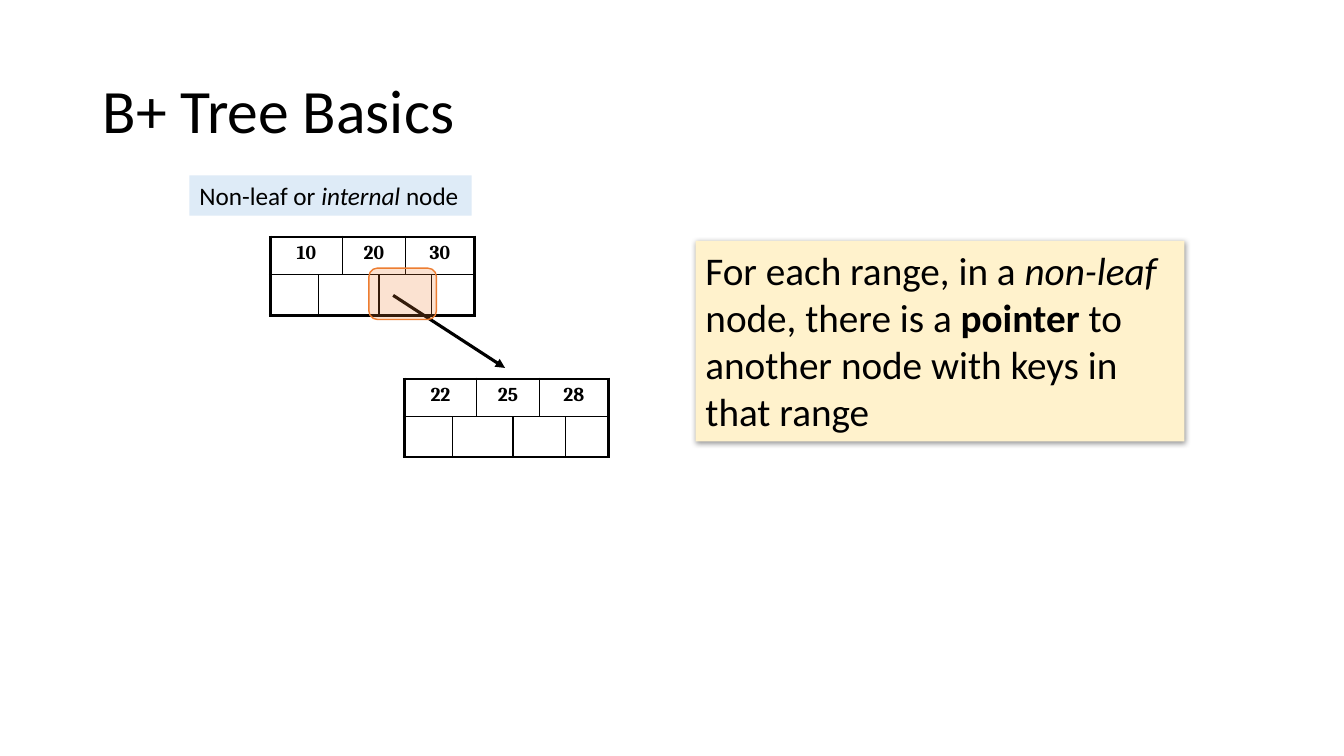
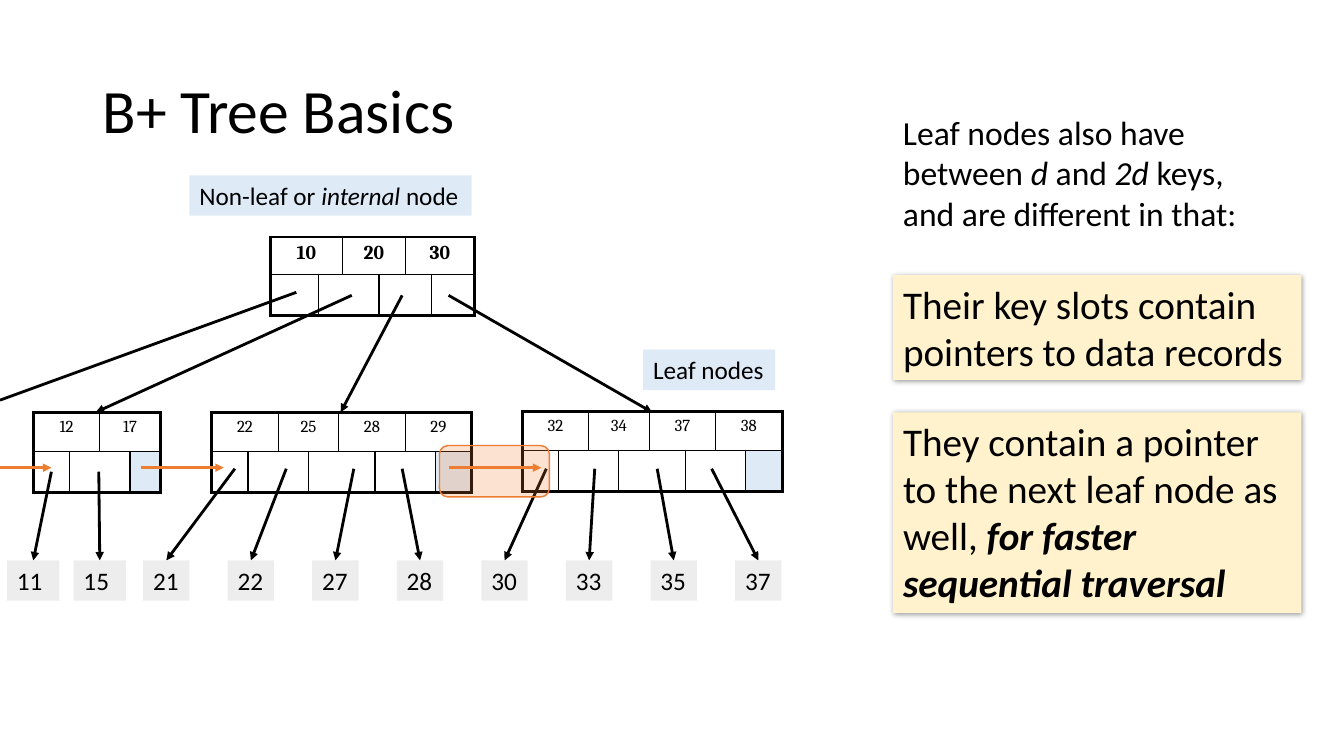
from dataclasses import dataclass

from lxml import etree
from pptx import Presentation
from pptx.dml.color import RGBColor
from pptx.enum.shapes import MSO_CONNECTOR, MSO_SHAPE
from pptx.enum.text import MSO_ANCHOR, MSO_AUTO_SIZE, PP_ALIGN
from pptx.oxml.ns import qn
from pptx.util import Inches, Pt

LINE = MSO_CONNECTOR.STRAIGHT
ROUND = MSO_SHAPE.ROUNDED_RECTANGLE
MIDDLE = MSO_ANCHOR.MIDDLE
FIT, FIXED = MSO_AUTO_SIZE.SHAPE_TO_FIT_TEXT, MSO_AUTO_SIZE.NONE
LEFT, CENTER = PP_ALIGN.LEFT, PP_ALIGN.CENTER

# The grid has ten columns and ten rows to the inch
CELL = Inches(0.1)
WIDE, HIGH = 133.33, 75


@dataclass(frozen=True)
class Theme:
    ink: str = "000000"
    blue: str = "DEEBF7"
    cream: str = "FFF2CC"
    gray: str = "EDEDED"
    orange: str = "ED7D31"
    sans: str = "Calibri"
    serif: str = "Cambria"
    title: int = 44
    note: int = 28
    text: int = 24
    label: int = 18
    key: int = 14
    leaf: int = 12
    thick: float = 2.25
    mid: float = 2
    thin: float = 1


def grid(*spots):
    return [round(spot * CELL) for spot in spots]


def rgb(color):
    return RGBColor.from_string(color)


def node(home, tag, **attrs):
    names = {name: str(value) for name, value in attrs.items()}
    return etree.SubElement(home, qn(tag), names)


class Deck:
    def __init__(self, theme):
        self.theme = theme
        self.file = Presentation()
        self.file.slide_width, self.file.slide_height = grid(WIDE, HIGH)
        self.slide = None

    def page(self, title):
        """Start a slide with the shared title style."""
        self.slide = self.file.slides.add_slide(self.file.slide_layouts[5])
        head = self.slide.shapes.title
        head.left, head.top, head.width, head.height = grid(9.2, 4, 115, 14.5)
        frame = head.text_frame
        frame.auto_size = FIXED
        frame.vertical_anchor = MIDDLE
        para = frame.paragraphs[0]
        para.line_spacing = 0.9
        self.put(para, [(title, "")], self.theme.title)

    def put(self, para, runs, size, face=None, align=LEFT):
        """Add runs; a mark of b or i makes a run bold or italic."""
        para.alignment = align
        for text, mark in runs:
            run = para.add_run()
            run.text = text
            font = run.font
            font.name = face or self.theme.sans
            font.size = Pt(size)
            font.bold = "b" in mark
            font.italic = "i" in mark
            font.color.rgb = rgb(self.theme.ink)

    def box(self, spot, runs, size, fill=None, wrap=True):
        shape = self.slide.shapes.add_textbox(*grid(*spot))
        if fill:
            shape.fill.solid()
            shape.fill.fore_color.rgb = rgb(fill)
        frame = shape.text_frame
        frame.word_wrap = wrap
        frame.auto_size = FIT
        self.put(frame.paragraphs[0], runs, size)
        return shape

    def label(self, spot, runs):
        self.box(spot, runs, self.theme.label, self.theme.blue, wrap=False)

    def note(self, spot, runs):
        """Cream box with a soft shadow."""
        shape = self.box(spot, runs, self.theme.note, self.theme.cream)
        soft = node(node(shape._element.spPr, "a:effectLst"), "a:outerShdw",
                    blurRad=Pt(4), dist=Pt(1), dir=45 * 60000,
                    algn="tl", rotWithShape=0)
        tint = node(soft, "a:srgbClr", val=self.theme.ink)
        node(tint, "a:alpha", val=40000)

    def record(self, left, width, text, tail, wrap=False):
        """Data record with the arrow that leads to it."""
        top = 55.6
        self.arrow(tail, (left + width / 2, top))
        self.box((left, top, width, 4), [(text, "")], self.theme.label,
                 self.theme.gray, wrap)

    def arrow(self, tail, tip, color=None, width=None, head=True):
        line = self.slide.shapes.add_connector(LINE, *grid(*tail, *tip))
        line.line.color.rgb = rgb(color or self.theme.ink)
        line.line.width = Pt(width or self.theme.mid)
        props = line._element.spPr
        if head:
            node(props.find(qn("a:ln")), "a:tailEnd", type="triangle")
        node(props, "a:effectLst")

    def glow(self, *spot):
        """See-through frame around a pointer."""
        shape = self.slide.shapes.add_shape(ROUND, *grid(*spot))
        shape.shadow.inherit = False
        shape.fill.solid()
        shape.fill.fore_color.rgb = rgb(self.theme.orange)
        tint = shape._element.spPr.find(qn("a:solidFill"))[0]
        node(tint, "a:alpha", val=22000)
        shape.line.color.rgb = rgb(self.theme.orange)
        shape.line.width = Pt(self.theme.thin)

    def edge(self, cell, sides):
        """Draw the four borders of a cell, before its fill."""
        props = cell._tc.get_or_add_tcPr()
        for side, width in zip("LRTB", sides):
            line = node(props, f"a:ln{side}", w=Pt(width))
            node(node(line, "a:solidFill"), "a:srgbClr", val=self.theme.ink)

    def tree(self, left, top, keys, cols, high, size, mark="", last=None):
        """Tree node: keys on top, pointer slots set off by half a key."""
        count = len(cols)
        frame = self.slide.shapes.add_table(
            2, count, *grid(left, top, sum(cols), 2 * high))
        table = frame.table
        table.first_row = table.horz_banding = False
        for col, width in zip(table.columns, cols):
            col.width = grid(width)[0]
        for row in table.rows:
            row.height = grid(high)[0]
        pairs = [(at, at + 1) for at in range(0, count, 2)]
        slots = [(0, 0), *[(at, at + 1) for at in range(1, count - 1, 2)],
                 (count - 1, count - 1)]
        thick, thin = self.theme.thick, self.theme.thin
        for row, spans in enumerate((pairs, slots)):
            for first, end in spans:
                sides = (thick if first == 0 else thin,
                         thick if end == count - 1 else thin,
                         thin if row else thick,
                         thick if row else thin)
                for at in range(first, end + 1):
                    cell = table.cell(row, at)
                    self.edge(cell, sides)
                    cell.fill.background()
                if end > first:
                    table.cell(row, first).merge(table.cell(row, end))
        for key, (first, _) in zip(keys, pairs):
            para = table.cell(0, first).text_frame.paragraphs[0]
            self.put(para, [(key, mark)], size, self.theme.serif, CENTER)
        if last:
            cell = table.cell(1, count - 1)
            cell.fill.solid()
            cell.fill.fore_color.rgb = rgb(last)

    def inner(self, left, top, keys):
        self.tree(left, top, keys, (4.8, 2.1, 3.6, 2.6, 2.6, 4.3), 3.75,
                  self.theme.key, "b")

    def leaf(self, left, top, keys):
        cols = (3.6, 3, 3, 3, 3.6, 3, 3, 3.6)
        if len(keys) == 2:
            cols = (3.6, 3, 3, 3)
        self.tree(left, top, keys, cols, 3.93, self.theme.leaf,
                  last=self.theme.blue)

    def root(self):
        """Top node and its label, the same on each slide."""
        self.inner(26.8, 23.5, ("10", "20", "30"))
        self.label((18.8, 17.4, 28, 4),
                   [("Non-leaf or ", ""), ("internal ", "i"), ("node", "")])


def ranges(deck):
    deck.page("B+ Tree Basics")
    deck.root()
    deck.arrow((39, 29.3), (50.1, 36.5), width=deck.theme.thick)
    deck.glow(36.6, 26.6, 6.7, 5.1)
    deck.inner(40.1, 37.6, ("22", "25", "28"))
    deck.note((69, 23.9, 48.5, 19.9), [
        ("For each range, in a ", ""), ("non-leaf ", "i"),
        ("node, there is a ", ""), ("pointer", "b"),
        (" to another node with keys in that range", "")])


def leaves(deck):
    deck.page("B+ Tree Basics")
    deck.root()

    # Leaf nodes
    deck.leaf(3.3, 40.9, ("12", "17"))
    deck.leaf(21, 40.9, ("22", "25", "28", "29"))
    deck.leaf(51.8, 40.8, ("32", "34", "37", "38"))
    deck.label((63.8, 34.7, 13.1, 4), [("Leaf nodes", "")])

    # Pointers from the root; the first runs out at the slide's edge
    deck.arrow((29.4, 29), (0, 39.7), head=False)
    for tail, tip in ((34.9, 9.5), (39.9, 33.8), (44.5, 64.7)):
        deck.arrow((tail, 29.3), (tip, 40.9))

    # Data records
    for left, text, tail in ((0.7, "11", 5.1), (7.3, "15", 9.8)):
        deck.record(left, 5.2, text, (tail, 46.8), wrap=True)
    texts = ("21", "22", "27", "28", "30", "33", "35", "37")
    tails = (23.3, 28.4, 35.1, 39.9, 54.2, 59, 65.2, 70.6)
    for at, (text, tail) in enumerate(zip(texts, tails)):
        deck.record(14.2 + 8.39 * at, 4.6, text, (tail, 46.5))

    # Links between leaves
    deck.glow(43.6, 44.2, 10.9, 5.1)
    for tail, tip in ((0, 5.1), (14, 22.2), (44.5, 53.7)):
        deck.arrow((tail, 46.4), (tip, 46.4), deck.theme.orange)

    # Text at the right
    deck.box((88.6, 10.6, 39, 13.1), [
        ("Leaf nodes also have between ", ""), ("d ", "i"), ("and ", ""),
        ("2d ", "i"), ("keys, and are different in that:", "")],
        deck.theme.text)
    deck.note((88.6, 27.3, 40.5, 10.4), [
        ("Their key slots contain pointers to data records", "")])
    deck.note((88.6, 40.9, 40.5, 19.9), [
        ("They contain a pointer to the next leaf node as well, ", ""),
        ("for faster sequential traversal", "bi")])


def main():
    deck = Deck(Theme())
    ranges(deck)
    leaves(deck)
    deck.file.save("out.pptx")


if __name__ == "__main__":
    main()
